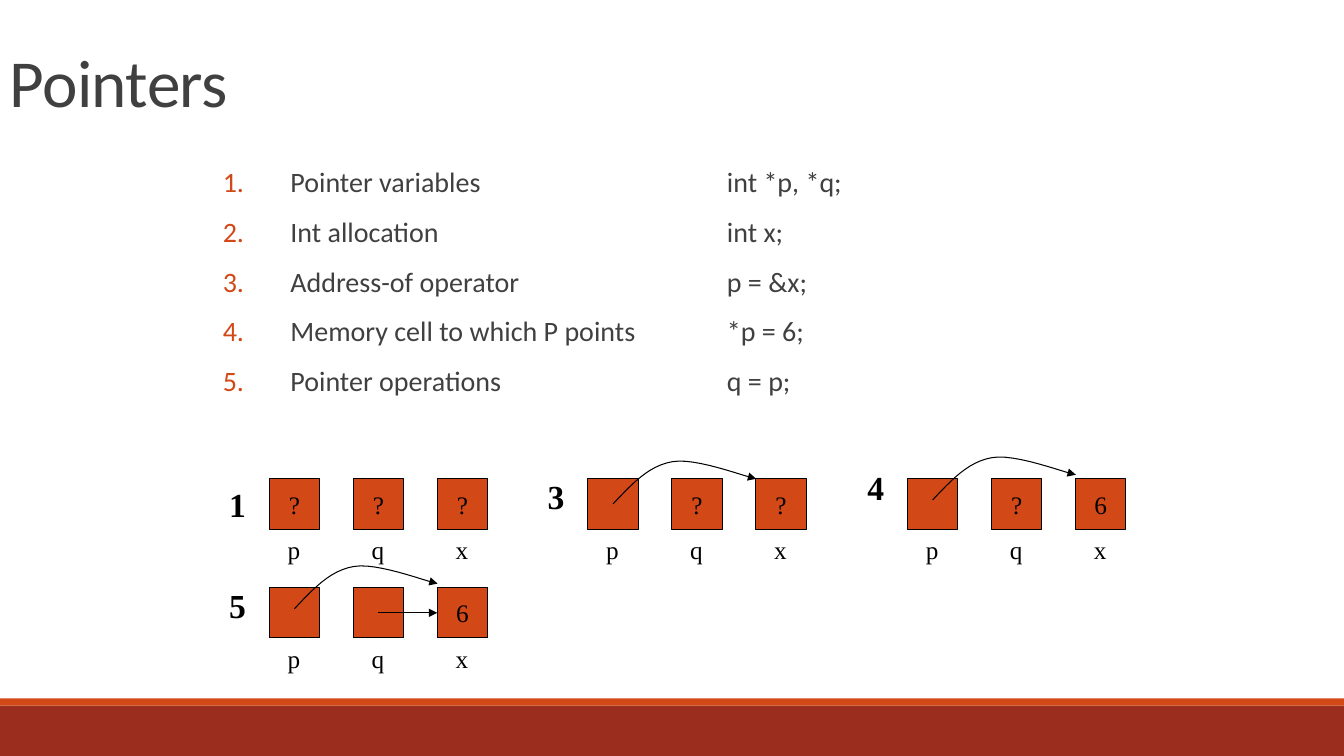
from lxml import etree
from pptx import Presentation
from pptx.dml.color import RGBColor
from pptx.enum.shapes import MSO_CONNECTOR, MSO_SHAPE
from pptx.enum.text import MSO_ANCHOR, PP_ALIGN
from pptx.oxml.ns import qn
from pptx.util import Inches, Pt

COLORS = {"accent": "D34817", "footer": "9B2D1F", "text": "404040", "black": "000000"}
BODY_FONT = "Calibri"
DIAGRAM_FONT = "Times New Roman"
CELL = 0.5
PITCH = 2.5 / 3
NAMES = "pqx"
STATEMENTS = [
    "Pointer variables\t\t\tint *p, *q;",
    "Int allocation\t\t\tint x;",
    "Address-of operator\t\t\tp = &x;",
    "Memory cell to which P points\t*p = 6;",
    "Pointer operations\t\t\tq = p;",
]
CURVES = [
    [(0, 0), (0.18, -0.19), (0.35, -0.38), (0.59, -0.42)],
    [(0.59, -0.42), (0.82, -0.46), (1.28, -0.28), (1.42, -0.25)],
]


def rgb(name):
    return RGBColor.from_string(COLORS[name])


def style(p, font, size, color, bold=False):
    for r in p.runs:
        r.font.name = font
        r.font.size = Pt(size)
        r.font.bold = bold
        r.font.color.rgb = rgb(color)


def add_rect(s, x, y, w, h, fill):
    sp = s.shapes.add_shape(MSO_SHAPE.RECTANGLE, Inches(x), Inches(y), Inches(w), Inches(h))
    sp.shadow.inherit = False
    sp.fill.solid()
    sp.fill.fore_color.rgb = rgb(fill)
    sp.line.fill.background()
    return sp


def add_text(s, x, y, w, h):
    return s.shapes.add_textbox(Inches(x), Inches(y), Inches(w), Inches(h)).text_frame


def centre_text(tf, text, size, bold=False):
    tf.word_wrap = False
    tf.text = text
    p = tf.paragraphs[0]
    p.alignment = PP_ALIGN.CENTER
    style(p, DIAGRAM_FONT, size, "black", bold)


def arrow_line(sp):
    sp.line.color.rgb = rgb("black")
    sp.line.width = Pt(0.75)
    ln = sp.line._get_or_add_ln()
    etree.SubElement(ln, qn("a:tailEnd"), type="triangle")


def add_footer(s, x, y, w, h):
    band = 0.07
    add_rect(s, x, y + band, w, h - band, "footer")
    add_rect(s, x, y, w, band, "accent")


def add_title(s, x, y, w, h):
    tf = add_text(s, x, y, w, h)
    tf.word_wrap = True
    tf.vertical_anchor = MSO_ANCHOR.BOTTOM
    tf.text = "Pointers"
    p = tf.paragraphs[0]
    p.line_spacing = 0.85
    style(p, BODY_FONT, 48, "text")
    p.runs[0].font._element.set("spc", "-50")


def add_statements(s, x, y, w, h):
    tf = add_text(s, x, y, w, h)
    tf.word_wrap = True
    tf.margin_left = tf.margin_right = 0
    tf.text = "\n".join(STATEMENTS)
    for p in tf.paragraphs:
        p.line_spacing = 0.9
        p.space_before = Pt(12)
        p.space_after = Pt(2)
        style(p, BODY_FONT, 20, "text")
        pPr = p._p.get_or_add_pPr()
        pPr.set("marL", str(Inches(0.67)))
        pPr.set("indent", str(-Inches(0.67)))
        pPr.set("defTabSz", str(Inches(1)))
        color = etree.SubElement(pPr, qn("a:buClr"))
        etree.SubElement(color, qn("a:srgbClr"), val=COLORS["accent"])
        etree.SubElement(pPr, qn("a:buFont"), typeface="+mj-lt")
        etree.SubElement(pPr, qn("a:buAutoNum"), type="arabicPeriod")


def bezier(a, b, c, d, t):
    u = 1 - t
    return tuple(
        u**3 * i + 3 * u * u * t * j + 3 * u * t * t * k + t**3 * m
        for i, j, k, m in zip(a, b, c, d)
    )


def add_curved_arrow(s, x, y):
    steps = 12
    points = [bezier(*curve, n / steps) for curve in CURVES for n in range(1, steps + 1)]
    builder = s.shapes.build_freeform(Inches(x), Inches(y))
    builder.add_line_segments([(Inches(x + dx), Inches(y + dy)) for dx, dy in points], close=False)
    sp = builder.convert_to_shape()
    sp.shadow.inherit = False
    sp.fill.background()
    arrow_line(sp)


def add_straight_arrow(s, x, y, target):
    sp = s.shapes.add_connector(
        MSO_CONNECTOR.STRAIGHT, Inches(x), Inches(y), target.left, Inches(y)
    )
    sp.end_connect(target, 1)
    arrow_line(sp)
    etree.SubElement(sp._element.spPr, qn("a:effectLst"))


def add_memory(s, x, y, step, step_dy, values, arrow_dy=None, q_arrow=False):
    cells = []
    for i, (name, value) in enumerate(zip(NAMES, values)):
        left = x + i * PITCH
        sp = add_rect(s, left, y, CELL, CELL, "accent")
        sp.line.color.rgb = rgb("black")
        sp.line.width = Pt(0.75)
        if value:
            sp.text_frame.vertical_anchor = MSO_ANCHOR.MIDDLE
            centre_text(sp.text_frame, value, 18)
        centre_text(add_text(s, left + 0.08, y + CELL, 0.33, 0.4), name, 18)
        cells.append(sp)
    if arrow_dy is not None:
        add_curved_arrow(s, x + CELL / 2, y + arrow_dy)
    if q_arrow:
        add_straight_arrow(s, x + PITCH + CELL / 2, y + CELL / 2, cells[2])
    centre_text(add_text(s, x - 0.5, y + step_dy, 0.37, 0.5), step, 24, True)


def main():
    prs = Presentation()
    prs.slide_width = Inches(13.33)
    prs.slide_height = Inches(7.5)
    s = prs.slides.add_slide(prs.slide_layouts[6])
    add_footer(s, 0, 6.93, 13.33, 0.57)
    add_title(s, 0, 0, 8.5, 1.25)
    add_statements(s, 2.21, 1.62, 9.08, 4.5)
    add_memory(s, 2.67, 4.75, "1", 0, ["?", "?", "?"])
    add_memory(s, 5.83, 4.75, "3", -0.08, ["", "?", "?"], 0.25)
    add_memory(s, 9, 4.75, "4", -0.17, ["", "?", "6"], 0.21)
    add_memory(s, 2.67, 5.83, "5", -0.08, ["", "", "6"], 0.21, True)
    prs.save("out.pptx")


if __name__ == "__main__":
    main()
